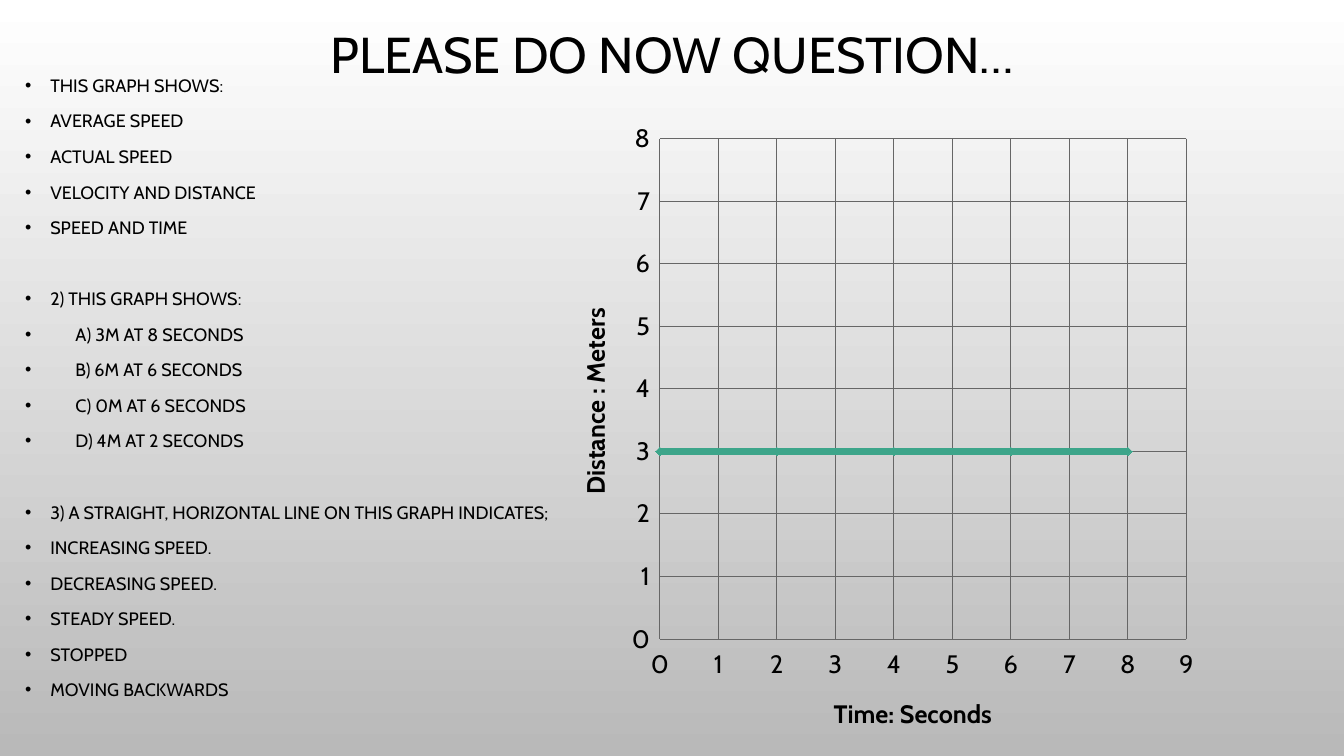
import pptx
import pptx.util
import pptx.chart.data
import pptx.dml.color
import pptx.enum.chart
import pptx.enum.text
import lxml.etree

Inches, Pt = pptx.util.Inches, pptx.util.Pt
RGB = pptx.dml.color.RGBColor.from_string
enum = pptx.enum

# Content
TITLE = "PLEASE DO NOW QUESTION…"
GROUPS = [
    ["THIS GRAPH SHOWS:", "AVERAGE SPEED", "ACTUAL SPEED",
     "VELOCITY AND DISTANCE", "SPEED AND TIME"],
    ["2) THIS GRAPH SHOWS:", "\tA) 3M AT 8 SECONDS", "\tB) 6M AT 6 SECONDS",
     "\tC) 0M AT 6 SECONDS", "\tD) 4M AT 2 SECONDS"],
    ["3) A STRAIGHT, HORIZONTAL LINE ON THIS GRAPH INDICATES;",
     "INCREASING SPEED.", "DECREASING SPEED.", "STEADY SPEED.",
     "STOPPED", "MOVING BACKWARDS"],
]
POINTS = [(time, 3) for time in range(0, 9, 2)]
AXES = {"x": ("Time: Seconds", 9), "y": ("Distance : Meters", 8)}

# Theme
THEME = {
    "font": "Cabin", "ink": "000000", "line": "3DA58A", "grid": "666666",
    "back": ("FFFFFF", "B9B9B9"),
    "title": 36, "body": 12.8, "chart": 18,
    "gap": 10, "break": 35.5,
}
BOXES = {
    "title": (1, 0.14, 11.33, 0.86),
    "body": (0.15, 0.69, 13.18, 6.81),
    "chart": (5.56, 1.16, 6.52, 6.19),
}
PLOT = {"x": 0.151, "y": 0.035, "w": 0.801, "h": 0.802}


def put(item, **vals):
    for name, val in vals.items():
        setattr(item, name, val)


def style(font, size, bold=False):
    put(font, name=THEME["font"], size=Pt(size), bold=bold)
    font.color.rgb = RGB(THEME["ink"])


def place(name):
    return [Inches(n) for n in BOXES[name]]


def stroke(line, color, width):
    line.color.rgb = RGB(color)
    line.width = Pt(width)


def node(parent, tag, **attrs):
    space = parent.nsmap[parent.prefix]
    return lxml.etree.SubElement(parent, f"{{{space}}}{tag}", **attrs)


def bullet(para):
    props = para._p.get_or_add_pPr()
    put(para, space_before=Pt(0))
    props.set("marL", str(Inches(0.25)))
    props.set("indent", str(-Inches(0.25)))
    tint = node(props, "buClr")
    node(tint, "srgbClr", val=THEME["ink"])
    node(props, "buFont", typeface="Arial")
    node(props, "buChar", char="•")


deck = pptx.Presentation()
put(deck, slide_width=Inches(13.33), slide_height=Inches(7.5))
slide = deck.slides.add_slide(deck.slide_layouts[5])

# Background
fill = slide.background.fill
fill.gradient()
fill.gradient_angle = 270
for stop, color, spot in zip(fill.gradient_stops, THEME["back"], (0, 1)):
    stop.color.rgb = RGB(color)
    stop.position = spot

# Title
title = slide.shapes.title
put(title, **dict(zip(("left", "top", "width", "height"), place("title"))))
put(title.text_frame, text=TITLE, word_wrap=True,
    vertical_anchor=enum.text.MSO_ANCHOR.MIDDLE)
head = title.text_frame.paragraphs[0]
put(head, alignment=enum.text.PP_ALIGN.CENTER, line_spacing=0.9)
style(head.runs[0].font, THEME["title"])

# Questions
frame = slide.shapes.add_textbox(*place("body")).text_frame
frame.word_wrap = True
for g, group in enumerate(GROUPS):
    for n, text in enumerate(group):
        first = g == n == 0
        para = frame.paragraphs[0] if first else frame.add_paragraph()
        bullet(para)
        para.text = text
        space = 0 if first else THEME["gap"] if n else THEME["break"]
        para.space_before = Pt(space)
        style(para.font, THEME["body"])

# Distance and time chart
data = pptx.chart.data.XyChartData()
series = data.add_series("Series 1")
for point in POINTS:
    series.add_data_point(*point)
kinds = enum.chart
chart = slide.shapes.add_chart(
    kinds.XL_CHART_TYPE.XY_SCATTER_LINES, *place("chart"), data).chart
put(chart, has_legend=False, has_title=False)
style(chart.font, THEME["chart"])
chart.plots[0].vary_by_categories = False

for axis, (label, top) in zip((chart.category_axis, chart.value_axis),
                              AXES.values()):
    put(axis, minimum_scale=0, maximum_scale=top, major_unit=1,
        has_major_gridlines=True,
        major_tick_mark=kinds.XL_TICK_MARK.NONE,
        minor_tick_mark=kinds.XL_TICK_MARK.NONE,
        tick_label_position=kinds.XL_TICK_LABEL_POSITION.LOW)
    put(axis.tick_labels, number_format="General",
        number_format_is_linked=False)
    stroke(axis.major_gridlines.format.line, THEME["grid"], 0.75)
    stroke(axis.format.line, THEME["grid"], 0.75)
    words = axis.axis_title.text_frame
    words.text = label
    style(words.paragraphs[0].runs[0].font, THEME["chart"], True)
chart.category_axis.crosses_at = 1

trace = chart.plots[0].series[0]
trace.smooth = False
stroke(trace.format.line, THEME["line"], 4.5)
put(trace.marker, style=kinds.XL_MARKER_STYLE.DIAMOND, size=6)
trace.marker.format.fill.solid()
trace.marker.format.fill.fore_color.rgb = RGB(THEME["line"])
stroke(trace.marker.format.line, THEME["line"], 0.75)

# Fixed plot area
area = chart._chartSpace.chart.plotArea
for old in area.findall("{*}layout"):
    area.remove(old)
layout = node(area, "layout")
area.insert(0, layout)
manual = node(layout, "manualLayout")
node(manual, "layoutTarget", val="inner")
for side in "xy":
    node(manual, side + "Mode", val="edge")
for side, share in PLOT.items():
    node(manual, side, val=str(share))

deck.save("out.pptx")
